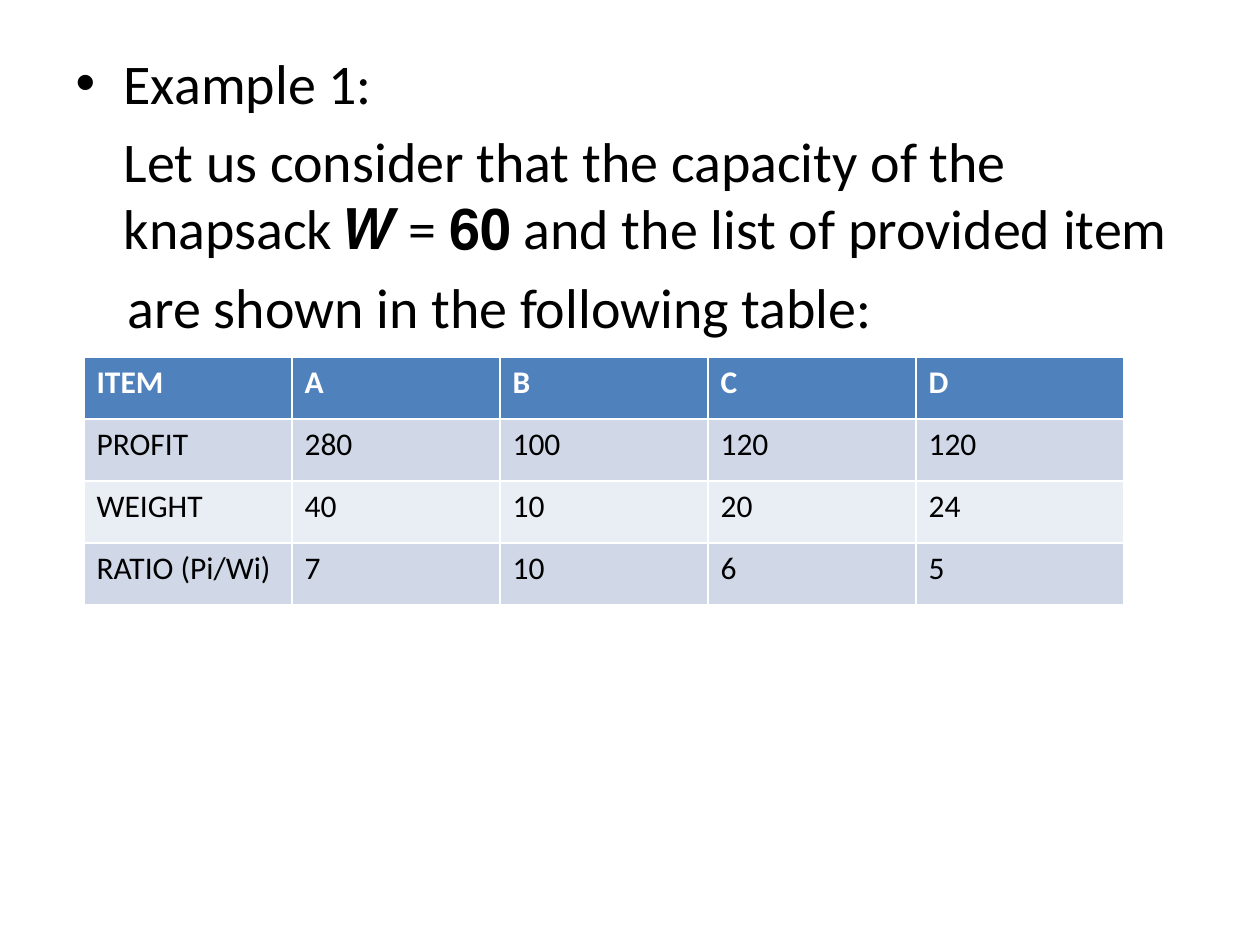
from pptx import Presentation
from pptx.dml.color import RGBColor as RGB
from pptx.util import Pt
from lxml import etree

PX = 914400 / 126
NS = "http://schemas.openxmlformats.org/drawingml/2006/main"


def px(n):
    return int(n * PX)


def write(p, text, size=18, color="000000", bold=False):
    r = p.add_run()
    r.text = text
    f = r.font
    f.name, f.size, f.bold = "Calibri", Pt(size), bold
    f.color.rgb = RGB.from_string(color)


prs = Presentation()
prs.slide_width, prs.slide_height = px(1260), px(945)
s = prs.slides.add_slide(prs.slide_layouts[1])
title = s.shapes.title
title.element.getparent().remove(title.element)

body = s.placeholders[1]
body.left, body.top, body.width, body.height = px(63), px(42), px(1134), px(872)
tf = body.text_frame
tf.word_wrap = True
lines = [
    ("Example 1:", 48, -48, "•"),
    ("Let us consider that the capacity of the knapsack 𝑾 = 𝟔𝟎 and the list of provided item", 48, 0, None),
    ("are shown in the following table:", 52, 0, None),
]
for i, (text, margin, indent, bullet) in enumerate(lines):
    p = tf.paragraphs[0] if i == 0 else tf.add_paragraph()
    write(p, text, size=32)
    pPr = p._p.get_or_add_pPr()
    pPr.set("marL", str(px(margin)))
    pPr.set("indent", str(px(indent)))
    if bullet:
        etree.SubElement(pPr, f"{{{NS}}}buChar", char=bullet)
    else:
        etree.SubElement(pPr, f"{{{NS}}}buNone")

rows = [
    ("ITEM", "A", "B", "C", "D"),
    ("PROFIT", "280", "100", "120", "120"),
    ("WEIGHT", "40", "10", "20", "24"),
    ("RATIO (Pi/Wi)", "7", "10", "6", "5"),
]
fills = ["4F81BD", "D0D8E8", "E9EDF4", "D0D8E8"]
col_w, row_h = 208, 62
table = s.shapes.add_table(
    len(rows), len(rows[0]), px(84), px(357), px(col_w * len(rows[0])), px(row_h * len(rows))
).table
for col in table.columns:
    col.width = px(col_w)
for i, (row, fill) in enumerate(zip(rows, fills)):
    table.rows[i].height = px(row_h)
    for j, text in enumerate(row):
        cell = table.cell(i, j)
        cell.fill.solid()
        cell.fill.fore_color.rgb = RGB.from_string(fill)
        write(cell.text_frame.paragraphs[0], text, color="000000" if i else "FFFFFF", bold=i == 0)

prs.save("out.pptx")
